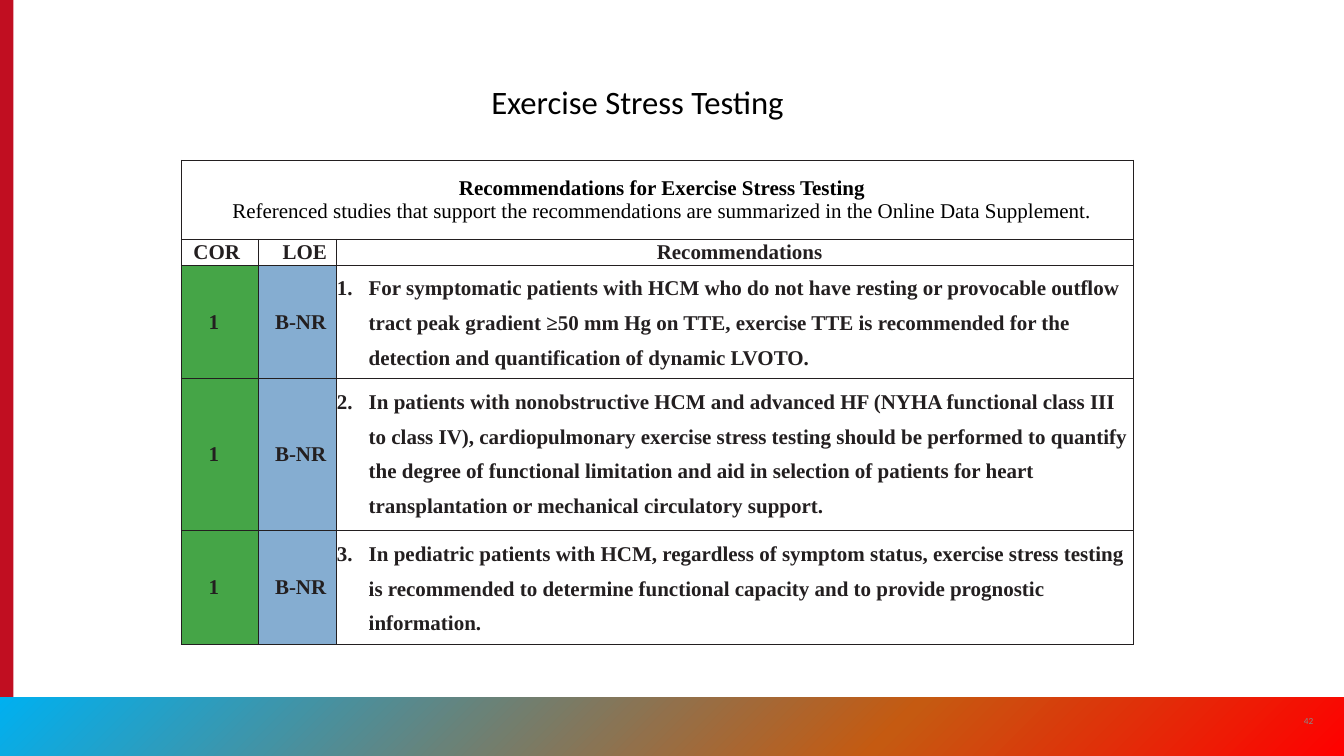
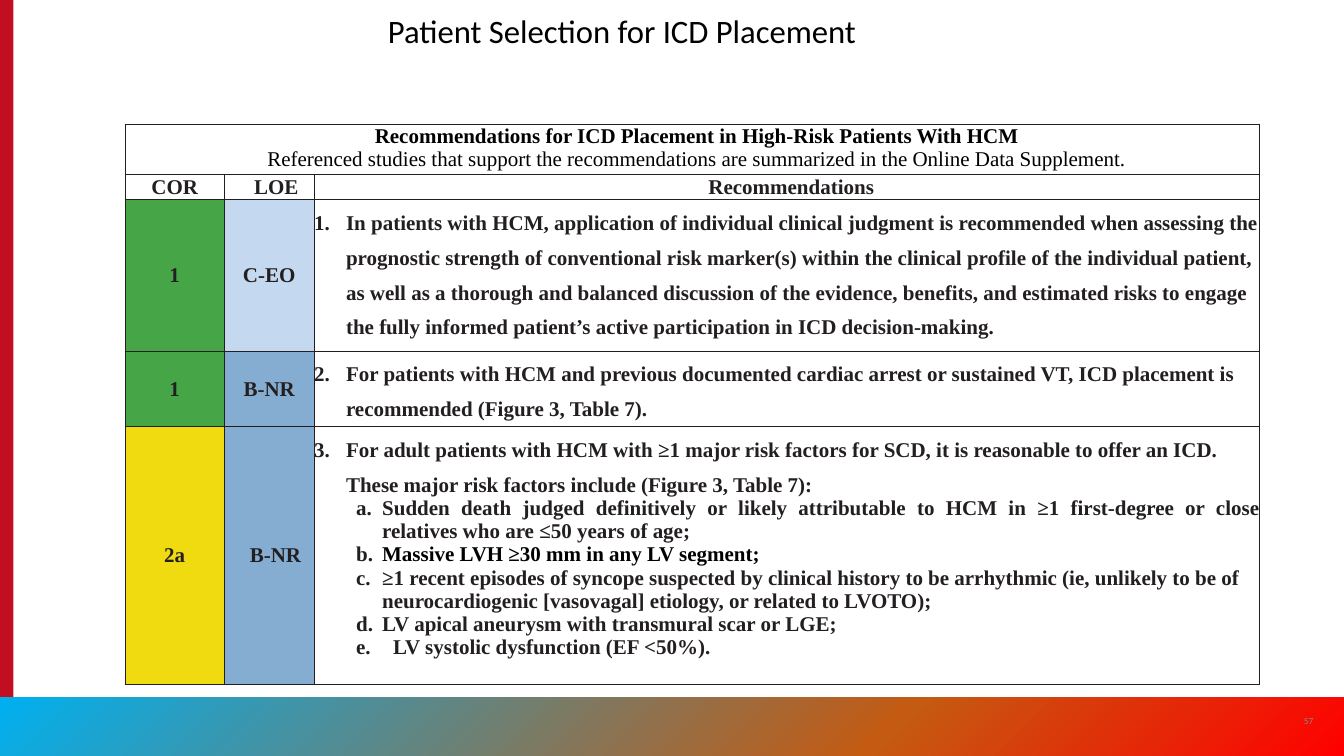
from copy import deepcopy
from dataclasses import dataclass

from lxml.etree import SubElement
from pptx import Presentation
from pptx.dml.color import RGBColor as RGB
from pptx.enum.shapes import MSO_SHAPE as SHAPE
from pptx.enum.text import MSO_ANCHOR as ANCHOR, PP_ALIGN as ALIGN
from pptx.oxml.ns import qn
from pptx.util import Inches, Pt


@dataclass(frozen=True)
class Theme:
    black: str = "000000"
    ink: str = "231F20"
    red: str = "C10E21"
    gray: str = "8A8B8A"
    class_1: str = "45A547"
    class_2a: str = "F0DA10"
    level_b: str = "85ADD1"
    level_c: str = "C4D9F0"
    band: tuple = ((0, "00B0F0"), (0.66, "C55A11"), (1, "FF0000"))
    title_font: str = "Calibri"
    table_font: str = "Times New Roman"
    title_size: int = 28
    table_size: int = 18
    number_size: int = 8


T = Theme()
REFERENCE = ("Referenced studies that support the recommendations are "
             "summarized in the Online Data Supplement.")


def add_run(p, text, color=T.ink, bold=True, font=T.table_font, size=T.table_size):
    r = p.add_run()
    r.text = text
    r.font.name, r.font.size, r.font.bold = font, Pt(size), bold
    r.font.color.rgb = RGB.from_string(color)


def add_label(s, box, text, size, color, align=ALIGN.LEFT, anchor=ANCHOR.TOP):
    tf = s.shapes.add_textbox(*map(Inches, box)).text_frame
    tf.word_wrap = True
    tf.vertical_anchor = anchor
    p = tf.paragraphs[0]
    p.alignment = align
    add_run(p, text, color, False, T.title_font, size)


def add_block(s, box):
    sp = s.shapes.add_shape(SHAPE.RECTANGLE, *map(Inches, box))
    sp.shadow.inherit = False
    sp.line.fill.background()
    return sp


def add_frame(s, number):
    bar = add_block(s, (0, 0, 0.16, 9))
    bar.fill.solid()
    bar.fill.fore_color.rgb = RGB.from_string(T.red)

    band = add_block(s, (0, 8.3, 16, 0.7))
    band.fill.gradient()
    band.fill.gradient_angle = 315
    stops = band._element.spPr.find(".//" + qn("a:gsLst"))
    stops.insert(1, deepcopy(stops[0]))
    for stop, (position, color) in zip(band.fill.gradient_stops, T.band):
        stop.position = position
        stop.color.rgb = RGB.from_string(color)

    add_label(s, (15.34, 8.34, 0.48, 0.48), number, T.number_size, T.gray,
              ALIGN.CENTER, ANCHOR.MIDDLE)


def add_border(cell):
    tcPr = cell._tc.get_or_add_tcPr()
    for i, side in enumerate(("lnL", "lnR", "lnT", "lnB")):
        ln = SubElement(tcPr, qn(f"a:{side}"), w=str(Pt(1)))
        fill = SubElement(ln, qn("a:solidFill"))
        SubElement(fill, qn("a:srgbClr"), val=T.ink)
        tcPr.insert(i, ln)


def set_number(p, style, start, left, hang):
    pPr = p._p.get_or_add_pPr()
    pPr.set("marL", str(Inches(left)))
    pPr.set("indent", str(-Inches(hang)))
    color = SubElement(pPr, qn("a:buClr"))
    SubElement(color, qn("a:srgbClr"), val=T.ink)
    SubElement(pPr, qn("a:buAutoNum"), type=style, startAt=str(start))


def fill_center(cell, text, pad=(0, 0), color=None):
    cell.margin_left, cell.margin_right = map(Inches, pad)
    cell.vertical_anchor = ANCHOR.MIDDLE
    p = cell.text_frame.paragraphs[0]
    p.alignment = ALIGN.CENTER
    add_run(p, text)
    if color:
        cell.fill.solid()
        cell.fill.fore_color.rgb = RGB.from_string(color)


def fill_heading(cell, heading, anchor):
    cell.margin_left = Inches(0.1)
    cell.vertical_anchor = anchor
    tf = cell.text_frame
    for p, text, bold in ((tf.paragraphs[0], heading, True),
                          (tf.add_paragraph(), REFERENCE, False)):
        p.alignment = ALIGN.CENTER
        add_run(p, text, T.black, bold)


def fill_recommendation(cell, number, text, factors):
    tf = cell.text_frame
    p = tf.paragraphs[0]
    set_number(p, "arabicPeriod", number, 0.38, 0.38)
    p.line_spacing = 1.5
    add_run(p, text)
    for i, (factor, color, align, shift) in enumerate(factors, 1):
        p = tf.add_paragraph()
        p.level = 1
        p.alignment = align
        set_number(p, "alphaLcPeriod", i, 0.81 + shift, 0.31 + shift)
        add_run(p, factor, color)


def add_recommendations(s, at, cols, heights, heading, anchor, cor_pad, rows):
    size = sum(cols), sum(heights)
    table = s.shapes.add_table(len(heights), len(cols),
                               *map(Inches, at + size)).table
    table.first_row = table.horz_banding = False
    for col, width in zip(table.columns, cols):
        col.width = Inches(width)
    for row, height in zip(table.rows, heights):
        row.height = Inches(height)
    for cell in table.iter_cells():
        cell.margin_left = cell.margin_right = 0
        cell.margin_top = cell.margin_bottom = 0
        cell.fill.background()

    table.cell(0, 0).merge(table.cell(0, 2))
    fill_heading(table.cell(0, 0), heading, anchor)
    header = (("COR", cor_pad), ("LOE", (0.17, 0)), ("Recommendations", (0.1, 0)))
    for i, (text, pad) in enumerate(header):
        fill_center(table.cell(1, i), text, pad)
    for i, (cor, loe, text, factors) in enumerate(rows, 1):
        fill_center(table.cell(i + 1, 0), *cor)
        fill_center(table.cell(i + 1, 1), *loe)
        fill_recommendation(table.cell(i + 1, 2), i, text, factors)
    for cell in table.iter_cells():
        add_border(cell)


def add_slide(prs, number, title, title_box):
    s = prs.slides.add_slide(prs.slide_layouts[6])
    add_frame(s, number)
    add_label(s, title_box, title, T.title_size, T.black)
    return s


def add_stress_testing(prs):
    s = add_slide(prs, "42", "Exercise Stress Testing", (5.75, 0.92, 4.49, 0.57))
    cor = ("1", (0, 0.15), T.class_1)
    loe = ("B-NR", (0.07, 0), T.level_b)
    texts = (
        "For symptomatic patients with HCM who do not have resting or provocable "
        "outflow tract peak gradient ≥50 mm Hg on TTE, exercise TTE is recommended "
        "for the detection and quantification of dynamic LVOTO.",
        "In patients with nonobstructive HCM and advanced HF (NYHA functional class "
        "III to class IV), cardiopulmonary exercise stress testing should be "
        "performed to quantify the degree of functional limitation and aid in "
        "selection of patients for heart transplantation or mechanical circulatory "
        "support.",
        "In pediatric patients with HCM, regardless of symptom status, exercise "
        "stress testing is recommended to determine functional capacity and to "
        "provide prognostic information.",
    )
    add_recommendations(
        s, (2.16, 1.91), (0.92, 0.93, 9.49), (0.94, 0.31, 1.35, 1.81, 1.35),
        "Recommendations for Exercise Stress Testing", ANCHOR.MIDDLE, (0, 0.08),
        [(cor, loe, text, ()) for text in texts])


def add_icd_placement(prs):
    s = add_slide(prs, "57", "Patient Selection for ICD Placement",
                  (4.52, 0.08, 6.97, 0.57))
    factors = (
        ("Sudden death judged definitively or likely attributable to HCM in ≥1 "
         "first-degree or close relatives who are ≤50 years of age;",
         T.ink, ALIGN.JUSTIFY, 0),
        ("Massive LVH ≥30 mm in any LV segment;", T.black, ALIGN.JUSTIFY, 0),
        ("≥1 recent episodes of syncope suspected by clinical history to be "
         "arrhythmic (ie, unlikely to be of neurocardiogenic [vasovagal] etiology, "
         "or related to LVOTO);", T.ink, ALIGN.LEFT, 0),
        ("LV apical aneurysm with transmural scar or LGE;", T.ink, ALIGN.LEFT, 0),
        ("LV systolic dysfunction (EF <50%).", T.ink, ALIGN.LEFT, 0.13),
    )
    cor = ("1", (0, 0), T.class_1)
    rows = (
        (cor, ("C-EO", (0, 0), T.level_c),
         "In patients with HCM, application of individual clinical judgment is "
         "recommended when assessing the prognostic strength of conventional risk "
         "marker(s) within the clinical profile of the individual patient, as well "
         "as a thorough and balanced discussion of the evidence, benefits, and "
         "estimated risks to engage the fully informed patient’s active "
         "participation in ICD decision-making.", ()),
        (cor, ("B-NR", (0, 0), T.level_b),
         "For patients with HCM and previous documented cardiac arrest or sustained "
         "VT, ICD placement is recommended (Figure 3, Table 7).", ()),
        (("2a", (0, 0), T.class_2a), ("B-NR", (0.15, 0), T.level_b),
         "For adult patients with HCM with ≥1 major risk factors for SCD, it is "
         "reasonable to offer an ICD. These major risk factors include (Figure 3, "
         "Table 7):", factors),
    )
    add_recommendations(
        s, (1.49, 1.48), (1.18, 1.07, 11.26), (0.6, 0.3, 1.8, 0.9, 3.07),
        "Recommendations for ICD Placement in High-Risk Patients With HCM",
        ANCHOR.TOP, (0, 0), rows)


def main():
    prs = Presentation()
    prs.slide_width, prs.slide_height = Inches(16), Inches(9)
    add_stress_testing(prs)
    add_icd_placement(prs)
    prs.save("out.pptx")


if __name__ == "__main__":
    main()
